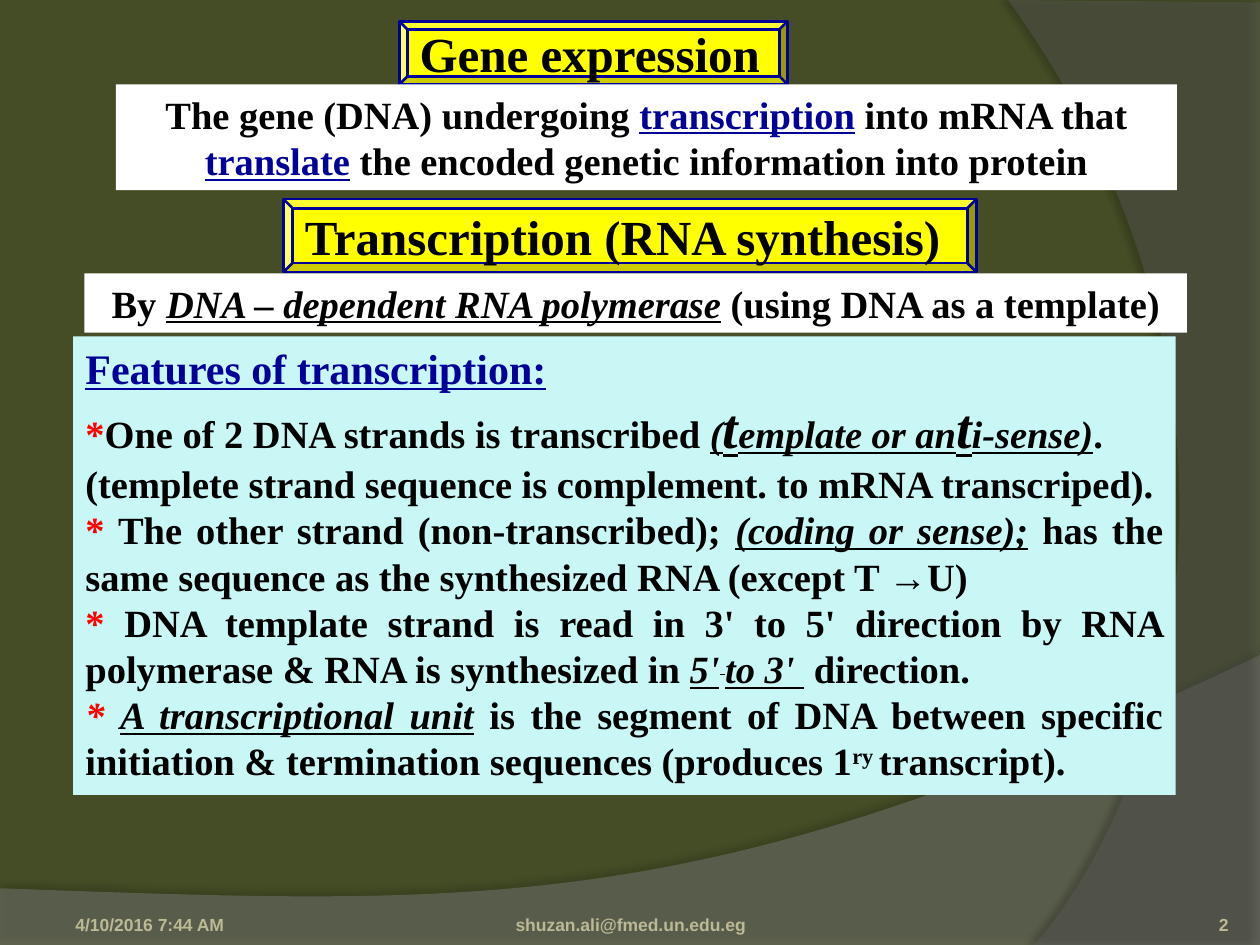
"""Build a slide that introduces gene expression and transcription."""
from lxml.etree import SubElement
from pptx import Presentation
from pptx.dml.color import RGBColor
from pptx.enum.shapes import MSO_SHAPE as Shape
from pptx.enum.text import MSO_ANCHOR as Anchor, PP_ALIGN as Align
from pptx.oxml.ns import qn
from pptx.util import Inches, Pt

BLACK = RGBColor(0, 0, 0)
WHITE = RGBColor(255, 255, 255)
RED = RGBColor(255, 0, 0)
NAVY = RGBColor(0, 0, 0x99)
YELLOW = RGBColor(255, 255, 0)
AQUA = RGBColor(0xC9, 0xF7, 0xF6)
OLIVE = RGBColor(0x44, 0x4D, 0x26)
SAND = RGBColor(0xBC, 0xB9, 0x95)
GREY = RGBColor(0x7F, 0x7F, 0x7F)
DARK_GREY = RGBColor(0x5E, 0x5E, 0x5E)

WIDTH, HEIGHT = 10, 7.5
UNITS = 100
SERIF, SANS = "Times New Roman", "Arial"

PLAIN = {}
TITLE = {"size": 28}
TERM = {"color": NAVY, "underline": True}
HEADING = {"color": NAVY, "underline": True, "size": 24}
STAR = {"color": RED}
KEY = {"italic": True, "underline": True}
BIG_KEY = {**KEY, "size": 32}
RAISED = {"baseline": 30}
FOOTER = {"color": SAND, "size": 10, "font": SANS}

SWOOSHES = [
    ([(0, HEIGHT), (WIDTH, HEIGHT), (WIDTH, 5.2), (0, 7.05)],
     [(5.59, 7.29), (3.91, 7.19)], GREY, 45, (35, 4, 3.5, 270)),
    ([(WIDTH, 0.02), (WIDTH, HEIGHT), (8.21, HEIGHT), (8, 0)],
     [(9.35, 6.19), (10.18, 3)], DARK_GREY, 40, (45, 4, 4, 180)),
]
BANNERS = [
    ((3.17, 0.17, 3.08, 0.5), "Gene expression"),
    ((2.25, 1.58, 5.5, 0.58), "Transcription (RNA synthesis)"),
]

DEFINITION = [[
    ("The gene (DNA) undergoing ", PLAIN), ("transcription", TERM),
    (" into mRNA that ", PLAIN), ("translate", TERM),
    (" the encoded genetic information into protein", PLAIN),
]]
ENZYME = [[
    ("By ", PLAIN), ("DNA – dependent RNA polymerase", KEY),
    (" (using DNA as a template)", PLAIN),
]]
FEATURES = [
    [("Features of transcription:", HEADING)],
    [("*", STAR), ("One of 2 DNA strands is transcribed ", PLAIN), ("(", KEY),
     ("t", BIG_KEY), ("emplate or an", KEY), ("t", BIG_KEY),
     ("i-sense)", KEY), (".", PLAIN)],
    [("(templete strand sequence is complement. to mRNA transcriped).", PLAIN)],
    [("*", STAR), (" The other strand (non-transcribed); ", PLAIN),
     ("(coding or sense);", KEY),
     (" has the same sequence as the synthesized RNA (except T →U)", PLAIN)],
    [("*", STAR),
     (" DNA template strand is read in 3' to 5' direction by RNA polymerase "
      "& RNA is synthesized in ", PLAIN),
     ("5'", KEY), (" ", {**KEY, **RAISED}), ("to 3' ", KEY),
     (" direction.", PLAIN)],
    [("* ", {**STAR, "italic": True}), ("A transcriptional unit", KEY),
     (" is the segment of DNA between specific initiation & termination "
      "sequences (produces 1", PLAIN),
     ("ry ", RAISED), ("transcript).", PLAIN)],
]
PANELS = [
    ((0.92, 0.67, 8.42, 0.84), WHITE, Align.CENTER, DEFINITION),
    ((0.67, 2.17, 8.75, 0.47), WHITE, Align.CENTER, ENZYME),
    ((0.58, 2.67, 8.75, 3.64), AQUA, Align.JUSTIFY, FEATURES),
]
FOOTERS = [
    ((0.5, 7.02, 2.33, 0.4), 0.1, Align.LEFT, "4/10/2016 7:44 AM"),
    ((3.42, 7.02, 3.17, 0.4), 0, Align.CENTER, "shuzan.ali@fmed.un.edu.eg"),
    ((8.92, 7.02, 0.83, 0.4), 0, Align.RIGHT, "2"),
]


def add_swoosh(page, corners, pulls, color, opacity, shadow):
    """Draw a translucent area whose last drawn side is a curve."""
    grid = [(round(x * UNITS), round(y * UNITS)) for x, y in corners]
    builder = page.shapes.build_freeform(*grid[0], scale=Inches(1) / UNITS)
    builder.add_line_segments(grid[1:], close=True)
    swoosh = builder.convert_to_shape()
    swoosh.fill.solid()
    swoosh.fill.fore_color.rgb = color
    swoosh.line.fill.background()
    swoosh.shadow.inherit = False

    properties = swoosh.element.spPr
    side = list(properties.iter(qn("a:lnTo")))[-1]
    side.tag = qn("a:cubicBezTo")
    left, top = (min(values) for values in zip(*grid))
    for index, (x, y) in enumerate(pulls):
        point = SubElement(side, qn("a:pt"), x=str(round(x * UNITS) - left),
                           y=str(round(y * UNITS) - top))
        side.insert(index, point)

    tint = properties.find(qn("a:solidFill")).find(qn("a:srgbClr"))
    SubElement(tint, qn("a:alpha"), val=str(opacity * 1000))
    strength, blur, distance, angle = shadow
    outer = SubElement(properties.find(qn("a:effectLst")), qn("a:outerShdw"),
                       blurRad=str(Pt(blur)), dist=str(Pt(distance)),
                       dir=str(angle * 60000), rotWithShape="0")
    shade = SubElement(outer, qn("a:srgbClr"), val=str(BLACK))
    SubElement(shade, qn("a:alpha"), val=str(strength * 1000))


def add_block(page, kind, place, fill):
    """Add a filled shape without outline or shadow."""
    box = page.shapes.add_shape(kind, *map(Inches, place))
    box.shadow.inherit = False
    box.fill.solid()
    box.fill.fore_color.rgb = fill
    box.line.fill.background()
    return box


def write(box, paragraphs, align, anchor):
    """Fill a box with paragraphs made of styled spans."""
    frame = box.text_frame
    frame.word_wrap = True
    frame.vertical_anchor = anchor
    for index, spans in enumerate(paragraphs):
        para = frame.add_paragraph() if index else frame.paragraphs[0]
        para.alignment = align
        for text, style in spans:
            span = para.add_run()
            span.text = text
            font = span.font
            font.name = style.get("font", SERIF)
            font.size = Pt(style.get("size", 22))
            font.color.rgb = style.get("color", BLACK)
            font.bold = True
            font.italic = style.get("italic", False)
            font.underline = style.get("underline", False)
            if "baseline" in style:
                font._element.set("baseline", str(style["baseline"] * 1000))


def main():
    """Assemble the slide and save it."""
    deck = Presentation()
    deck.slide_width, deck.slide_height = Inches(WIDTH), Inches(HEIGHT)
    page = deck.slides.add_slide(deck.slide_layouts[6])
    page.background.fill.solid()
    page.background.fill.fore_color.rgb = OLIVE
    for swoosh in SWOOSHES:
        add_swoosh(page, *swoosh)
    for place, text in BANNERS:
        banner = add_block(page, Shape.BEVEL, place, YELLOW)
        banner.line.color.rgb = NAVY
        banner.line.width = Pt(1.5)
        write(banner, [[(text, TITLE)]], Align.LEFT, Anchor.MIDDLE)
    for place, fill, align, paragraphs in PANELS:
        panel = add_block(page, Shape.RECTANGLE, place, fill)
        write(panel, paragraphs, align, Anchor.TOP)
    for place, inset, align, text in FOOTERS:
        box = page.shapes.add_textbox(*map(Inches, place))
        frame = box.text_frame
        frame.margin_left = frame.margin_right = Inches(inset)
        frame.margin_bottom = 0
        write(box, [[(text, FOOTER)]], align, Anchor.BOTTOM)
    deck.save("out.pptx")


if __name__ == "__main__":
    main()
